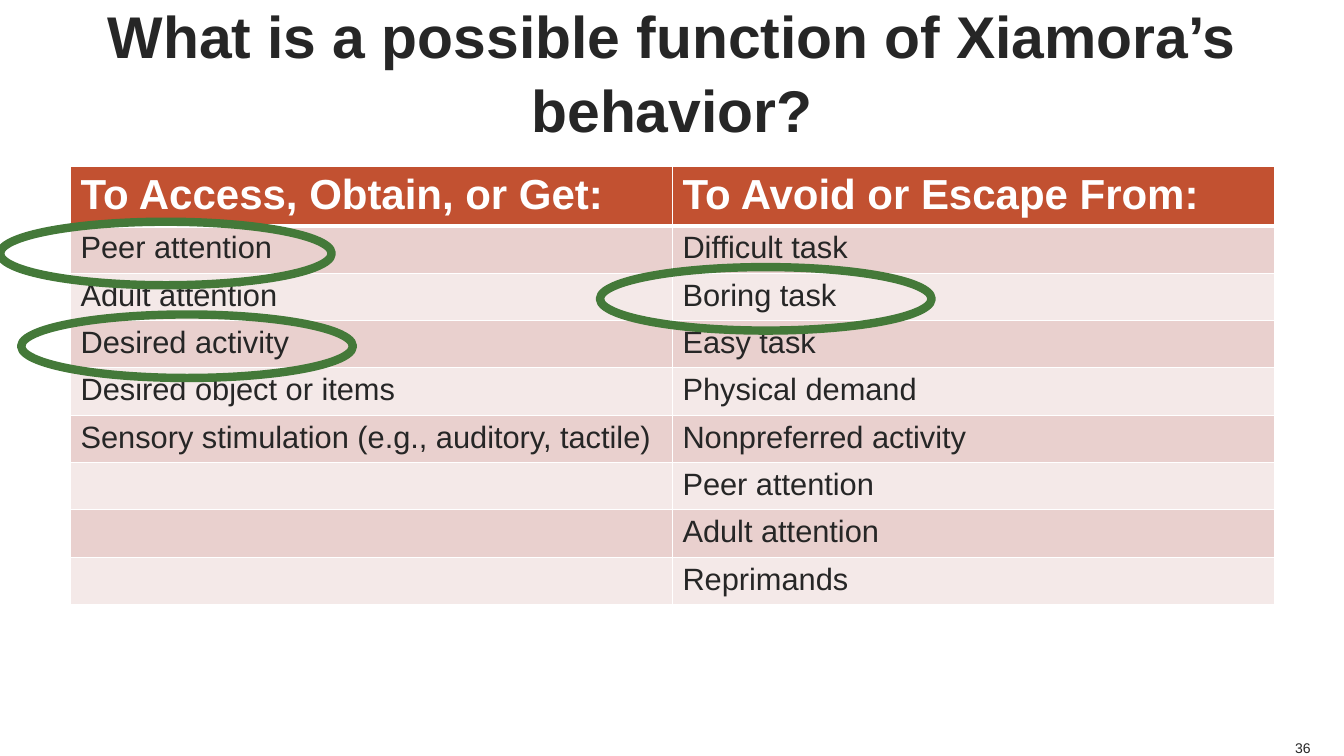
from dataclasses import dataclass

from lxml import etree
from pptx import Presentation
from pptx import util as u
from pptx.dml.color import RGBColor
from pptx.enum import shapes, text
from pptx.oxml.ns import qn

PX = 9144
COLORS = {
    "ink": "262626",
    "white": "FFFFFF",
    "header": "C25131",
    "odd": "E9D0CE",
    "even": "F4E9E8",
    "ring": "447939",
}
ROWS = [
    ("To Access, Obtain, or Get:", "To Avoid or Escape From:"),
    ("Peer attention", "Difficult task"),
    ("Adult attention", "Boring task"),
    ("Desired activity", "Easy task"),
    ("Desired object or items", "Physical demand"),
    ("Sensory stimulation (e.g., auditory, tactile)", "Nonpreferred activity"),
    ("", "Peer attention"),
    ("", "Adult attention"),
    ("", "Reprimands"),
]
COLUMN_W, HEADER_H, BODY_H = 597, 59, 47
TITLE_FONT = {"name": "Arial", "size": u.Pt(42), "bold": True}
HEADER_FONT = {"name": "Arial", "size": u.Pt(30), "bold": True}
BODY_FONT = {"name": "Arial", "size": u.Pt(22), "bold": False}
NUMBER_FONT = {"name": "Arial", "size": u.Pt(10), "bold": False}


@dataclass(frozen=True)
class Box:
    left: int
    top: int
    width: int
    height: int

    def emu(self) -> tuple[int, ...]:
        return tuple(n * PX for n in (self.left, self.top, self.width, self.height))


RINGS = [Box(595, 265, 329, 63), Box(21, 312, 329, 63), Box(0, 220, 329, 63)]


def rgb(name: str) -> RGBColor:
    return RGBColor.from_string(COLORS[name])


def set_attrs(target, values: dict) -> None:
    for name, value in values.items():
        setattr(target, name, value)


def write(tf, words: str, font: dict, color: str, align=text.PP_ALIGN.LEFT) -> None:
    p = tf.paragraphs[0]
    p.alignment = align
    r = p.add_run()
    r.text = words
    set_attrs(r.font, font)
    r.font.color.rgb = rgb(color)


def frame(tf, anchor, wrap: bool, auto_size) -> None:
    set_attrs(tf, {
        "margin_left": 0, "margin_top": 0, "margin_right": 0, "margin_bottom": 0,
        "vertical_anchor": anchor, "word_wrap": wrap, "auto_size": auto_size,
    })


def set_borders(cell, widths: dict[str, int]) -> None:
    tc_pr = cell._tc.get_or_add_tcPr()
    for i, (side, points) in enumerate(widths.items()):
        ln = etree.Element(qn(f"a:ln{side}"), w=str(u.Pt(points)))
        fill = etree.SubElement(ln, qn("a:solidFill"))
        etree.SubElement(fill, qn("a:srgbClr"), val=COLORS["white"])
        tc_pr.insert(i, ln)


def add_title(s) -> None:
    sp = s.shapes.title
    sp.left, sp.top, sp.width, sp.height = Box(0, 0, 1333, 140).emu()
    frame(sp.text_frame, text.MSO_ANCHOR.MIDDLE, True, text.MSO_AUTO_SIZE.NONE)
    write(sp.text_frame, "What is a possible function of Xiamora’s behavior?",
          TITLE_FONT, "ink", text.PP_ALIGN.CENTER)
    sp.text_frame.paragraphs[0].line_spacing = 1.05


def add_functions_table(s) -> None:
    height = HEADER_H + BODY_H * (len(ROWS) - 1)
    box = Box(70, 165, 2 * COLUMN_W, height)
    table = s.shapes.add_table(len(ROWS), 2, *box.emu()).table
    for column in table.columns:
        column.width = COLUMN_W * PX
    for i, row in enumerate(ROWS):
        header = i == 0
        table.rows[i].height = (HEADER_H if header else BODY_H) * PX
        band = "header" if header else ("even", "odd")[i % 2]
        widths = {"L": 1, "R": 1, "T": 3 if i == 1 else 1, "B": 3 if header else 1}
        for j, words in enumerate(row):
            cell = table.cell(i, j)
            cell.fill.solid()
            cell.fill.fore_color.rgb = rgb(band)
            set_borders(cell, widths)
            if words:
                write(cell.text_frame, words, HEADER_FONT if header else BODY_FONT,
                      "white" if header else "ink")


def add_slide_number(s) -> None:
    tf = s.shapes.add_textbox(*Box(1283, 733, 17, 17).emu()).text_frame
    frame(tf, text.MSO_ANCHOR.BOTTOM, False, text.MSO_AUTO_SIZE.SHAPE_TO_FIT_TEXT)
    write(tf, "36", NUMBER_FONT, "ink", text.PP_ALIGN.RIGHT)


def add_ring(s, box: Box) -> None:
    sp = s.shapes.add_shape(shapes.MSO_SHAPE.OVAL, *box.emu())
    sp.shadow.inherit = False
    sp.fill.background()
    sp.line.color.rgb = rgb("ring")
    sp.line.width = u.Pt(6)


def main() -> None:
    prs = Presentation()
    prs.slide_width, prs.slide_height = 1333 * PX, 750 * PX
    s = prs.slides.add_slide(prs.slide_layouts.get_by_name("Title Only"))
    add_title(s)
    add_functions_table(s)
    add_slide_number(s)
    for box in RINGS:
        add_ring(s, box)
    prs.save("out.pptx")


if __name__ == "__main__":
    main()
